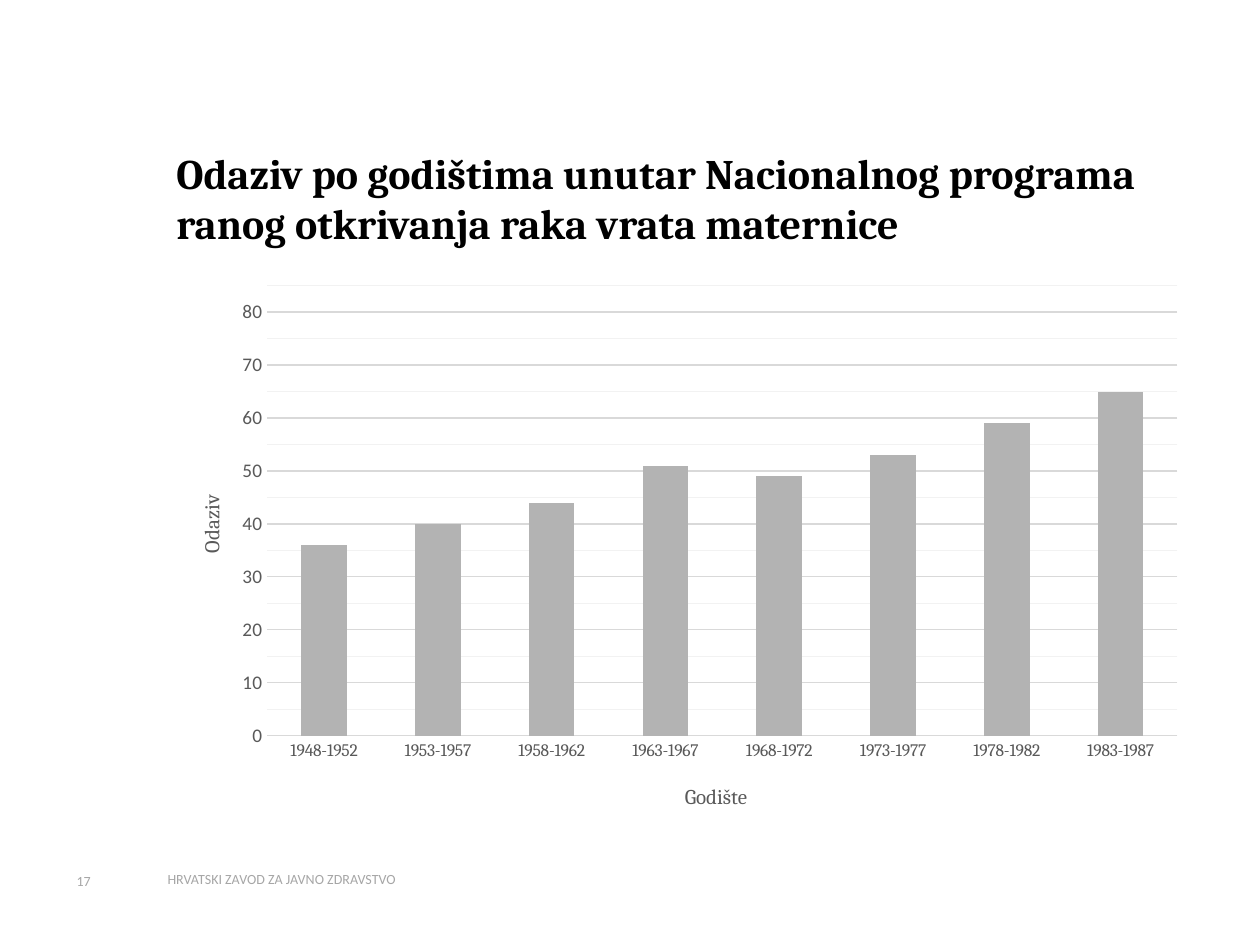
"""Build the slide on response to cervical screening by birth cohort."""
import copy
from dataclasses import dataclass

import lxml.etree
import pptx
import pptx.chart.data
import pptx.dml.color
import pptx.enum.chart
import pptx.enum.shapes
import pptx.enum.text
import pptx.oxml.ns
import pptx.util
from pptx.dml.color import RGBColor
from pptx.util import Inches, Pt

WHITE = RGBColor(0xFF, 0xFF, 0xFF)
BLACK = RGBColor(0x00, 0x00, 0x00)
FOOTER_GREY = RGBColor(0xA6, 0xA6, 0xA6)
LABEL_GREY = RGBColor(0x59, 0x59, 0x59)
BAR_GREY = RGBColor(0xB3, 0xB3, 0xB3)
MAJOR_GREY = RGBColor(0xD9, 0xD9, 0xD9)
MINOR_GREY = RGBColor(0xF2, 0xF2, 0xF2)
RESPONSES = (36, 40, 44, 51, 49, 53, 59, 65)
FIRST_YEAR = 1948
COHORT_YEARS = 5


@dataclass
class FooterText:
    """A small line of text at the foot of the page."""
    text: str
    left: float
    width: float
    height: float
    alignment: pptx.enum.text.PP_ALIGN


@dataclass
class AxisStyle:
    """The title, its place and the label font of a chart axis."""
    title: str
    title_place: dict[str, float]
    label_font: str
    label_size: int


FOOTERS = (
    FooterText("HRVATSKI ZAVOD ZA JAVNO ZDRAVSTVO", 1.33, 8.16, 0.17,
               pptx.enum.text.PP_ALIGN.LEFT),
    FooterText("17", 0, 1.33, 0.2, pptx.enum.text.PP_ALIGN.CENTER),
)
COHORT_AXIS = AxisStyle("Godište", {"x": 0.5, "y": 0.91}, "Cambria", 10)
RESPONSE_AXIS = AxisStyle("Odaziv", {"x": 0.03, "y": 0.39}, "Calibri", 11)
PLOT_PLACE = {"x": 0.1, "y": 0.02, "w": 0.88, "h": 0.81}


def style_font(font, name: str, size: int, color: RGBColor, bold: bool = False) -> None:
    """Set the typeface, size, colour and weight of a font."""
    font.name = name
    font.size = Pt(size)
    font.color.rgb = color
    font.bold = bold


def place_part(part, position: int, place: dict[str, float]) -> None:
    """Give a chart part a manual layout as fractions of the chart."""
    tag = pptx.oxml.ns.qn
    for old in part.findall(tag("c:layout")):
        part.remove(old)
    layout = lxml.etree.Element(tag("c:layout"))
    manual = lxml.etree.SubElement(layout, tag("c:manualLayout"))
    settings = {"xMode": "edge", "yMode": "edge", **place}
    if "w" in place:
        settings = {"layoutTarget": "inner", **settings}
    for name, value in settings.items():
        lxml.etree.SubElement(manual, tag(f"c:{name}")).set("val", str(value))
    part.insert(position, layout)


def style_axis(axis, style: AxisStyle) -> None:
    """Format the labels and the title of a chart axis."""
    axis.major_tick_mark = pptx.enum.chart.XL_TICK_MARK.NONE
    axis.minor_tick_mark = pptx.enum.chart.XL_TICK_MARK.NONE
    axis.format.line.fill.background()
    style_font(axis.tick_labels.font, style.label_font, style.label_size, LABEL_GREY)
    span = axis.axis_title.text_frame.paragraphs[0].add_run()
    span.text = style.title
    style_font(span.font, "Cambria", 12, LABEL_GREY)
    place_part(axis.axis_title._element, 1, style.title_place)


def add_gridlines(axis) -> None:
    """Draw thin major gridlines and paler minor ones."""
    tag = pptx.oxml.ns.qn
    axis.has_major_gridlines = axis.has_minor_gridlines = True
    line = axis.major_gridlines.format.line
    line.color.rgb = MAJOR_GREY
    line.width = Pt(0.75)
    major = axis._element.find(tag("c:majorGridlines"))
    minor = axis._element.find(tag("c:minorGridlines"))
    look = copy.deepcopy(major.find(tag("c:spPr")))
    look.find(f".//{tag('a:srgbClr')}").set("val", str(MINOR_GREY))
    minor.append(look)


def add_footer(page, footer: FooterText) -> None:
    """Add one footer text without margins."""
    box = page.shapes.add_textbox(Inches(footer.left), Inches(6.89),
                                  Inches(footer.width), Inches(footer.height))
    frame = box.text_frame
    frame.word_wrap = True
    frame.vertical_anchor = pptx.enum.text.MSO_ANCHOR.MIDDLE
    frame.margin_left = frame.margin_right = frame.margin_top = frame.margin_bottom = 0
    para = frame.paragraphs[0]
    para.alignment = footer.alignment
    span = para.add_run()
    span.text = footer.text
    style_font(span.font, "Calibri", 8, FOOTER_GREY)


def add_footer_panel(page) -> None:
    """Add the white panel behind the footer."""
    panel = page.shapes.add_shape(pptx.enum.shapes.MSO_SHAPE.RECTANGLE, Inches(0.16),
                                  Inches(6.8), Inches(3.09), Inches(0.47))
    panel.shadow.inherit = False
    panel.fill.solid()
    panel.fill.fore_color.rgb = WHITE
    panel.line.color.rgb = WHITE
    panel.line.width = Pt(2)


def set_title(page) -> None:
    """Place and fill the title placeholder."""
    title = page.shapes.title
    title.left, title.top = Inches(1.3), Inches(1.47)
    title.width, title.height = Inches(8.21), Inches(0.55)
    frame = title.text_frame
    frame.word_wrap = True
    frame.auto_size = pptx.enum.text.MSO_AUTO_SIZE.NONE
    frame.vertical_anchor = pptx.enum.text.MSO_ANCHOR.BOTTOM
    para = frame.paragraphs[0]
    para.alignment = pptx.enum.text.PP_ALIGN.LEFT
    span = para.add_run()
    span.text = ("Odaziv po godištima unutar Nacionalnog programa "
                 "ranog otkrivanja raka vrata maternice")
    style_font(span.font, "Cambria", 24, BLACK, bold=True)


def add_response_chart(page) -> None:
    """Add the column chart of response by birth cohort."""
    data = pptx.chart.data.CategoryChartData()
    starts = [FIRST_YEAR + COHORT_YEARS * index for index in range(len(RESPONSES))]
    data.categories = [f"{start}-{start + COHORT_YEARS - 1}" for start in starts]
    data.add_series("Series 1", RESPONSES)
    chart = page.shapes.add_chart(pptx.enum.chart.XL_CHART_TYPE.COLUMN_CLUSTERED,
                                  Inches(1.3), Inches(2.18), Inches(8.21),
                                  Inches(4.41), data).chart
    chart.has_legend = False
    chart.has_title = False
    style_font(chart.font, "Calibri", 10, BLACK)
    plot = chart.plots[0]
    plot.gap_width = 150
    plot.vary_by_categories = False
    fill = plot.series[0].format.fill
    fill.solid()
    fill.fore_color.rgb = BAR_GREY
    style_axis(chart.category_axis, COHORT_AXIS)
    axis = chart.value_axis
    style_axis(axis, RESPONSE_AXIS)
    axis.minimum_scale, axis.maximum_scale = 0, 85
    axis.major_unit, axis.minor_unit = 10, 5
    add_gridlines(axis)
    place_part(chart._chartSpace.chart.plotArea, 0, PLOT_PLACE)


def main() -> None:
    """Build and save the deck."""
    deck = pptx.Presentation()
    deck.slide_width, deck.slide_height = Inches(10), Inches(7.5)
    page = deck.slides.add_slide(deck.slide_layouts[5])
    add_footer_panel(page)
    for footer in FOOTERS:
        add_footer(page, footer)
    set_title(page)
    add_response_chart(page)
    deck.save("out.pptx")


if __name__ == "__main__":
    main()
